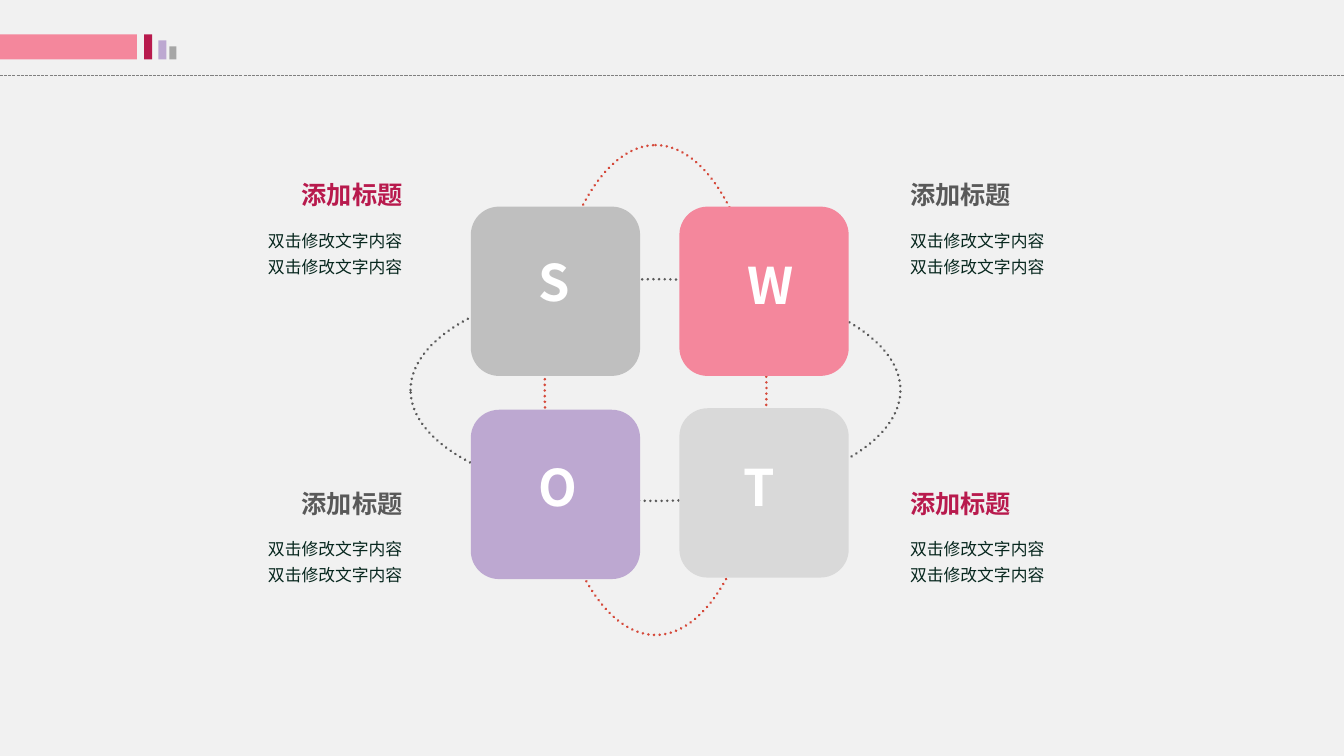
from dataclasses import dataclass

from lxml import etree
from pptx import Presentation
from pptx.dml.color import RGBColor
from pptx.enum.dml import MSO_LINE
from pptx.enum.shapes import MSO_CONNECTOR, MSO_SHAPE
from pptx.enum.text import MSO_AUTO_SIZE, PP_ALIGN
from pptx.oxml.ns import qn
from pptx.shapes.autoshape import Shape
from pptx.slide import Slide
from pptx.util import Inches, Pt

RECTANGLE = MSO_SHAPE.RECTANGLE
ROUNDED = MSO_SHAPE.ROUNDED_RECTANGLE
OVAL = MSO_SHAPE.OVAL
STRAIGHT = MSO_CONNECTOR.STRAIGHT
DASHED = MSO_LINE.SQUARE_DOT
DOTTED = MSO_LINE.ROUND_DOT
FIT_SHAPE = MSO_AUTO_SIZE.SHAPE_TO_FIT_TEXT
LEFT, CENTER, RIGHT = PP_ALIGN.LEFT, PP_ALIGN.CENTER, PP_ALIGN.RIGHT

SLIDE_WIDTH = Inches(13.333)
SLIDE_HEIGHT = Inches(7.5)
BLANK_LAYOUT = 6


@dataclass(frozen=True)
class Theme:
    font: str = "Noto Sans CJK SC"
    background: str = "F1F1F1"
    pink: str = "F4879C"
    crimson: str = "B81A4D"
    lilac: str = "BDA8D1"
    silver: str = "BFBFBF"
    pale: str = "D9D9D9"
    gray: str = "A6A6A6"
    rule: str = "808080"
    slate: str = "595959"
    red: str = "D5493A"
    body: str = "07271E"
    white: str = "FFFFFF"
    letter_size: float = 36
    heading_size: float = 18
    body_size: float = 12
    body_spacing: float = 1.3
    rule_width: float = 0.75
    ring_width: float = 2


@dataclass(frozen=True)
class Area:
    """A rectangle in percent of the slide's width and height."""
    left: float
    top: float
    width: float
    height: float


@dataclass(frozen=True)
class Bar:
    left: float
    width: float
    height: float
    color: str


@dataclass(frozen=True)
class Tile:
    letter: str
    left: float
    top: float
    color: str
    letter_area: Area


@dataclass(frozen=True)
class Note:
    edge: float
    top: float
    align: PP_ALIGN
    color: str


THEME = Theme()
RULE_TOP = 10
BAR_BOTTOM = 7.87
BARS = [
    Bar(0, 10.2, 3.33, THEME.pink),
    Bar(10.73, 0.6, 3.33, THEME.crimson),
    Bar(11.78, 0.6, 2.53, THEME.lilac),
    Bar(12.6, 0.53, 1.73, THEME.gray),
]

RING = Area(30.55, 36.93, 36.45, 29.33)
RINGS = {THEME.slate: 0, THEME.red: 90}

TILE_WIDTH, TILE_HEIGHT = 12.6, 22.4
TILE_LEFT, TILE_RIGHT = 35.03, 50.55
LETTER_HEIGHT = 9.33
TILES = [
    Tile("S", TILE_LEFT, 27.33, THEME.silver, Area(38.7, 32.53, 5.1, LETTER_HEIGHT)),
    Tile("W", TILE_RIGHT, 27.33, THEME.pink, Area(53.78, 32.93, 7.13, LETTER_HEIGHT)),
    Tile("O", TILE_LEFT, 54.2, THEME.lilac, Area(38.25, 59.73, 6.53, LETTER_HEIGHT)),
    Tile("T", TILE_RIGHT, 54, THEME.pale, Area(54.15, 59.73, 4.73, LETTER_HEIGHT)),
]

HEADING = "添加标题"
BODY = "双击修改文字内容\n双击修改文字内容"
HEADING_WIDTH, HEADING_HEIGHT = 9.9, 5.33
BODY_WIDTH, BODY_HEIGHT = 27.45, 8.27
BODY_DROP = 5.93
LEFT_EDGE, RIGHT_EDGE = 30.68, 66.98
UPPER, LOWER = 23.07, 63.87
NOTES = [
    Note(LEFT_EDGE, UPPER, RIGHT, THEME.crimson),
    Note(RIGHT_EDGE, UPPER, LEFT, THEME.slate),
    Note(LEFT_EDGE, LOWER, RIGHT, THEME.slate),
    Note(RIGHT_EDGE, LOWER, LEFT, THEME.crimson),
]


def across(percent: float) -> int:
    return round(SLIDE_WIDTH * percent / 100)


def down(percent: float) -> int:
    return round(SLIDE_HEIGHT * percent / 100)


def place(area: Area) -> tuple[int, int, int, int]:
    return across(area.left), down(area.top), across(area.width), down(area.height)


def add_block(page: Slide, kind: MSO_SHAPE, area: Area, color: str) -> None:
    block = page.shapes.add_shape(kind, *place(area))
    block.shadow.inherit = False
    block.fill.solid()
    block.fill.fore_color.rgb = RGBColor.from_string(color)
    block.line.fill.background()


def add_ring(page: Slide, color: str, rotation: float) -> None:
    ring = page.shapes.add_shape(OVAL, *place(RING))
    ring.shadow.inherit = False
    ring.rotation = rotation
    ring.fill.background()
    ring.line.color.rgb = RGBColor.from_string(color)
    ring.line.width = Pt(THEME.ring_width)
    ring.line.dash_style = DOTTED
    ring.line._get_or_add_ln().set("cap", "rnd")


def add_rule(page: Slide) -> None:
    rule = page.shapes.add_connector(
        STRAIGHT, 0, down(RULE_TOP), SLIDE_WIDTH, down(RULE_TOP))
    rule.line.color.rgb = RGBColor.from_string(THEME.rule)
    rule.line.width = Pt(THEME.rule_width)
    rule.line.dash_style = DASHED
    etree.SubElement(rule._element.spPr, qn("a:effectLst"))


def add_text(page: Slide, area: Area, text: str, *, size: float, color: str,
             align: PP_ALIGN, bold: bool = False, spacing: float = 1.0) -> Shape:
    box = page.shapes.add_textbox(*place(area))
    frame = box.text_frame
    frame.word_wrap = True
    frame.auto_size = FIT_SHAPE
    frame.text = text
    for para in frame.paragraphs:
        para.alignment = align
        para.line_spacing = spacing
        for span in para.runs:
            span.font.size = Pt(size)
            span.font.bold = bold
            span.font.color.rgb = RGBColor.from_string(color)
            span.font.name = THEME.font
            east_asian = etree.SubElement(span.font._element, qn("a:ea"))
            east_asian.set("typeface", THEME.font)
    return box


def add_note(page: Slide, note: Note) -> None:
    """Add a heading and its body, both flush with the note's edge."""
    def flush(top: float, width: float, height: float) -> Area:
        left = note.edge - width if note.align == RIGHT else note.edge
        return Area(left, top, width, height)

    add_text(page, flush(note.top, HEADING_WIDTH, HEADING_HEIGHT), HEADING,
             size=THEME.heading_size, color=note.color, align=note.align, bold=True)
    add_text(page, flush(note.top + BODY_DROP, BODY_WIDTH, BODY_HEIGHT), BODY,
             size=THEME.body_size, color=THEME.body, align=note.align,
             spacing=THEME.body_spacing)


def main() -> None:
    deck = Presentation()
    deck.slide_width, deck.slide_height = SLIDE_WIDTH, SLIDE_HEIGHT
    page = deck.slides.add_slide(deck.slide_layouts[BLANK_LAYOUT])
    page.background.fill.solid()
    page.background.fill.fore_color.rgb = RGBColor.from_string(THEME.background)

    add_rule(page)
    for bar in BARS:
        area = Area(bar.left, BAR_BOTTOM - bar.height, bar.width, bar.height)
        add_block(page, RECTANGLE, area, bar.color)
    for color, rotation in RINGS.items():
        add_ring(page, color, rotation)
    for tile in TILES:
        area = Area(tile.left, tile.top, TILE_WIDTH, TILE_HEIGHT)
        add_block(page, ROUNDED, area, tile.color)
        add_text(page, tile.letter_area, tile.letter, size=THEME.letter_size,
                 color=THEME.white, align=CENTER, bold=True)
    for note in NOTES:
        add_note(page, note)
    deck.save("out.pptx")


if __name__ == "__main__":
    main()
